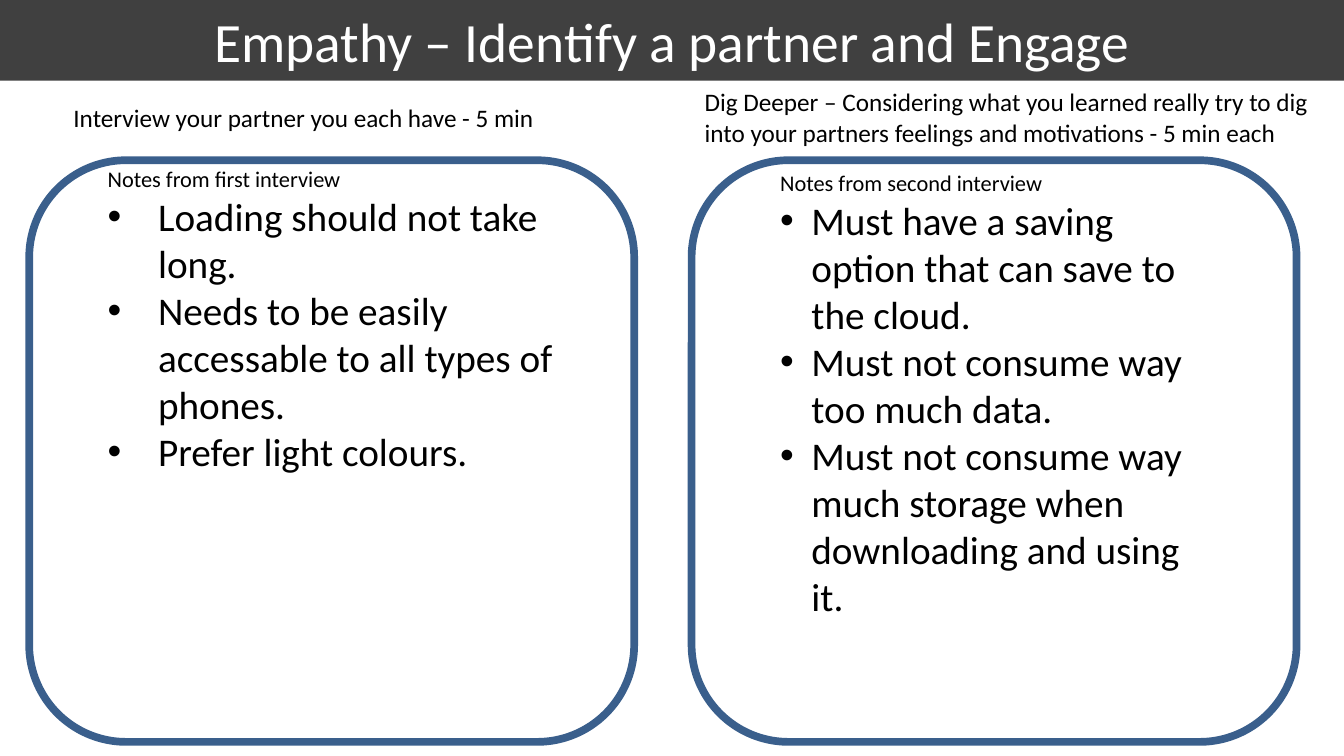
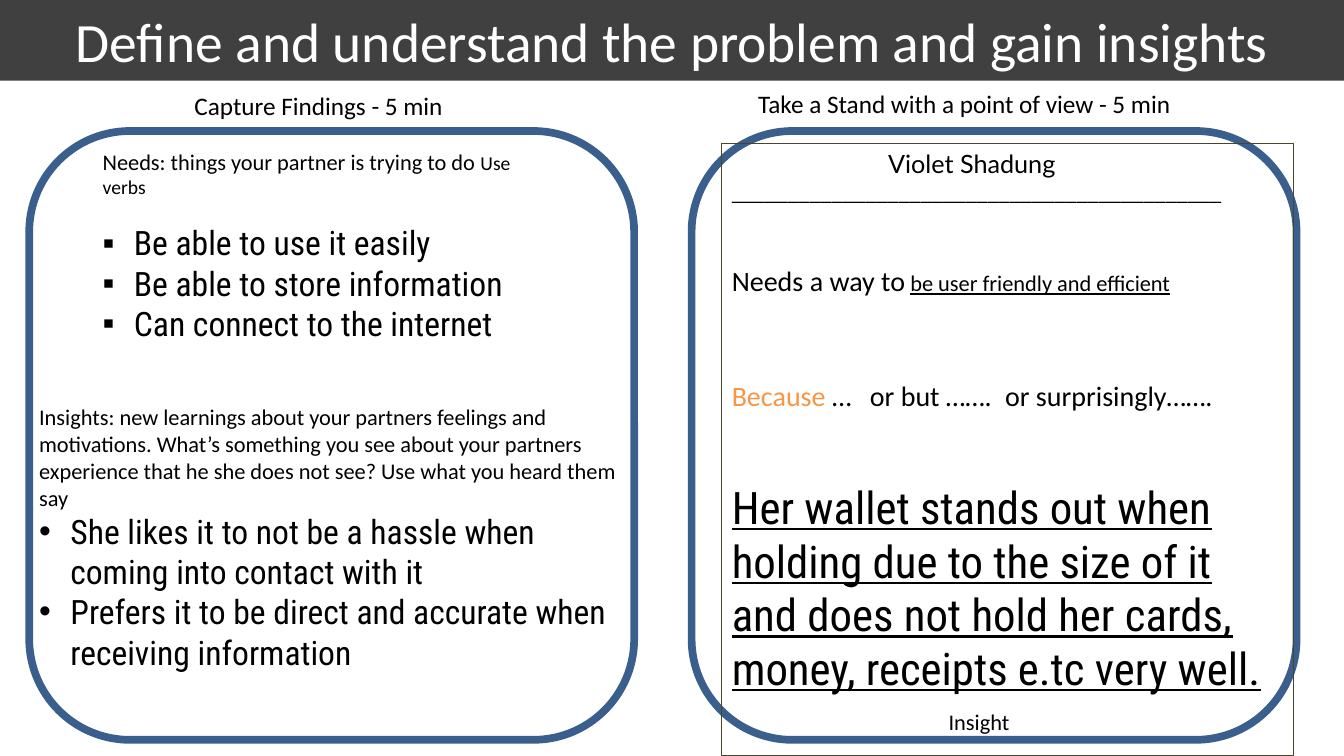
from dataclasses import dataclass

from lxml import etree
from pptx import Presentation
from pptx import util as u
from pptx.dml.color import RGBColor
from pptx.enum import shapes, text
from pptx.oxml.ns import qn

BAND_GREY = RGBColor(0x40, 0x40, 0x40)
PANEL_BLUE = RGBColor(0x3A, 0x5F, 0x8C)
FRAME_BROWN = RGBColor(0x4A, 0x45, 0x2A)
ORANGE = RGBColor(0xF7, 0x96, 0x46)
BLACK = RGBColor(0, 0, 0)
WHITE = RGBColor(0xFF, 0xFF, 0xFF)

BODY_FONT = "Calibri"
NAME_FONT = "Lato"
ANSWER_FONT = "Roboto Condensed"

SLIDE_WIDTH, SLIDE_HEIGHT = 13.33, 7.5
BAND_HEIGHT = 0.8
PANEL_LEFTS = (0.29, 6.86)
PANEL_WIDTH = 6


@dataclass
class Span:
    words: str
    size: float
    font: str = BODY_FONT
    color: RGBColor = BLACK
    underline: bool = False


@dataclass
class Line:
    spans: list
    before: float = 0
    indent: float = 0
    bullet: str = ""
    tabs: tuple = ()
    centred: bool = False


def bullets(sentences, mark, size, font=BODY_FONT, indent=0.31, before=0):
    return [
        Line([Span(words, size, font)], before if index == 0 else 0, indent, mark)
        for index, words in enumerate(sentences)
    ]


def format_paragraph(para, line):
    properties = para._p.get_or_add_pPr()
    if line.indent:
        properties.set("marL", str(u.Inches(line.indent)))
    if line.bullet:
        properties.set("indent", str(-u.Inches(line.indent)))
        etree.SubElement(properties, qn("a:buFont")).set("typeface", "Arial")
        etree.SubElement(properties, qn("a:buChar")).set("char", line.bullet)
    if line.tabs:
        stops = etree.SubElement(properties, qn("a:tabLst"))
        for place in line.tabs:
            etree.SubElement(stops, qn("a:tab"), pos=str(u.Inches(place)), algn="l")
    para.alignment = text.PP_ALIGN.CENTER if line.centred else text.PP_ALIGN.LEFT
    if line.before:
        para.space_before = u.Pt(line.before)


def fill_text(shape, lines, anchor=text.MSO_ANCHOR.TOP):
    frame = shape.text_frame
    frame.word_wrap = True
    frame.vertical_anchor = anchor
    for index, line in enumerate(lines):
        para = frame.add_paragraph() if index else frame.paragraphs[0]
        format_paragraph(para, line)
        for span in line.spans:
            run = para.add_run()
            run.text = span.words
            run.font.size = u.Pt(span.size)
            run.font.name = span.font
            run.font.color.rgb = span.color
            run.font.underline = span.underline


def add_text(page, box, lines):
    fill_text(page.shapes.add_textbox(*map(u.Inches, box)), lines)


def add_outline(page, kind, box, color, weight):
    shape = page.shapes.add_shape(kind, *map(u.Inches, box))
    shape.shadow.inherit = False
    shape.fill.background()
    shape.line.color.rgb = color
    shape.line.width = u.Pt(weight)
    return shape


def add_page(deck, title):
    page = deck.slides.add_slide(deck.slide_layouts[6])
    band = page.shapes.add_shape(
        shapes.MSO_SHAPE.RECTANGLE, 0, 0, u.Inches(SLIDE_WIDTH), u.Inches(BAND_HEIGHT)
    )
    band.shadow.inherit = False
    band.fill.solid()
    band.fill.fore_color.rgb = BAND_GREY
    band.line.fill.background()
    heading = Line([Span(title, 39.6, color=WHITE)], centred=True)
    fill_text(band, [heading], text.MSO_ANCHOR.MIDDLE)
    return page


def add_panel(page, box, heading, heading_box):
    left, top = box[:2]
    across, up, width, height = heading_box
    add_outline(page, shapes.MSO_SHAPE.ROUNDED_RECTANGLE, box, PANEL_BLUE, 5.5)
    add_text(page, (left + across, top - up, width, height), [Line([Span(heading, 18)])])


def add_interview(page, box, heading, heading_box, notes_box, label, notes, indent):
    add_panel(page, box, heading, heading_box)
    across, down, width, height = notes_box
    lines = [Line([Span(label, 16)])] + bullets(notes, "•", 28, indent=indent)
    add_text(page, (box[0] + across, box[1] + down, width, height), lines)


def add_findings(page, box):
    left, top, width = box[:3]
    add_panel(page, box, "Capture Findings - 5 min", (1.54, 0.45, 5.81, 0.4))
    needs = [Line([Span("Needs: things your partner is trying to do ", 16), Span("Use verbs", 14)])]
    needs += bullets(
        ["Be able to use it easily", "Be able to store information", "Can connect to the internet"],
        "▪", 24, ANSWER_FONT, before=17,
    )
    add_text(page, (left + 0.63, top + 0.12, 4.46, 2.32), needs)
    insights = [Line([Span(
        "Insights: new learnings about your partners feelings and motivations. "
        "What’s something you see about your partners experience that he she does not see? "
        "Use what you heard them say", 16,
    )])]
    insights += bullets(
        ["She likes it to not be a hassle when coming into contact with it",
         "Prefers it to be direct and accurate when receiving information"],
        "•", 24, ANSWER_FONT,
    )
    add_text(page, (left, top + 2.65, width, 2.79), insights)


def add_point_of_view(page, box):
    left, top = box[:2]
    add_panel(page, box, "Take a Stand with a point of view - 5 min", (0.56, 0.47, 4.86, 0.4))
    add_text(page, (left + 2.45, top + 5.68, 1.79, 0.37), [Line([Span("Insight", 16)])])
    frame = add_outline(
        page, shapes.MSO_SHAPE.RECTANGLE, (left + 0.3, top + 0.12, 5.67, 6.08), FRAME_BROWN, 0.75
    )
    fill_text(frame, [
        Line([Span("Violet Shadung", 18, NAME_FONT)], indent=1.55),
        Line([Span("_" * 44, 16)]),
        Line([
            Span("Needs a way to", 20),
            Span(" ", 16),
            Span("be user friendly and efficient", 16, underline=True),
        ], before=41.5),
        Line([
            Span("Because", 20, color=ORANGE),
            Span(" …\tor but …….\tor surprisingly…….", 20),
        ], before=58.5, tabs=(1.37, 2.71)),
        Line([Span(
            "Her wallet stands out when holding due to the size of it and does not hold "
            "her cards, money, receipts e.tc very well.", 32, ANSWER_FONT, underline=True,
        )], before=48),
    ])


def build_empathy(deck):
    page = add_page(deck, "Empathy – Identify a partner and Engage")
    first, second = ((left, 1.59, PANEL_WIDTH, 5.77) for left in PANEL_LEFTS)
    add_interview(
        page, first, "Interview your partner you each have - 5 min", (0.34, 0.62, 5.81, 0.4),
        (0.68, 0, 5.07, 4.81), "Notes from first interview",
        ["Loading should not take long.",
         "Needs to be easily accessable to all types of phones.",
         "Prefer light colours."],
        0.5,
    )
    add_interview(
        page, second,
        "Dig Deeper – Considering what you learned really try to dig into your partners "
        "feelings and motivations - 5 min each", (0.03, 0.78, 6.28, 0.71),
        (0.78, 0.04, 4.54, 4.88), "Notes from second interview",
        ["Must have a saving option that can save to the cloud.",
         "Must not consume way too much data.",
         "Must not consume way much storage when downloading and using it."],
        0.31,
    )


def build_define(deck):
    page = add_page(deck, "Define and understand the problem and gain insights")
    for left, add_region in zip(PANEL_LEFTS, (add_findings, add_point_of_view)):
        add_region(page, (left, 1.3, PANEL_WIDTH, 6.04))


def main():
    deck = Presentation()
    deck.slide_width = u.Inches(SLIDE_WIDTH)
    deck.slide_height = u.Inches(SLIDE_HEIGHT)
    build_empathy(deck)
    build_define(deck)
    deck.save("out.pptx")


if __name__ == "__main__":
    main()
